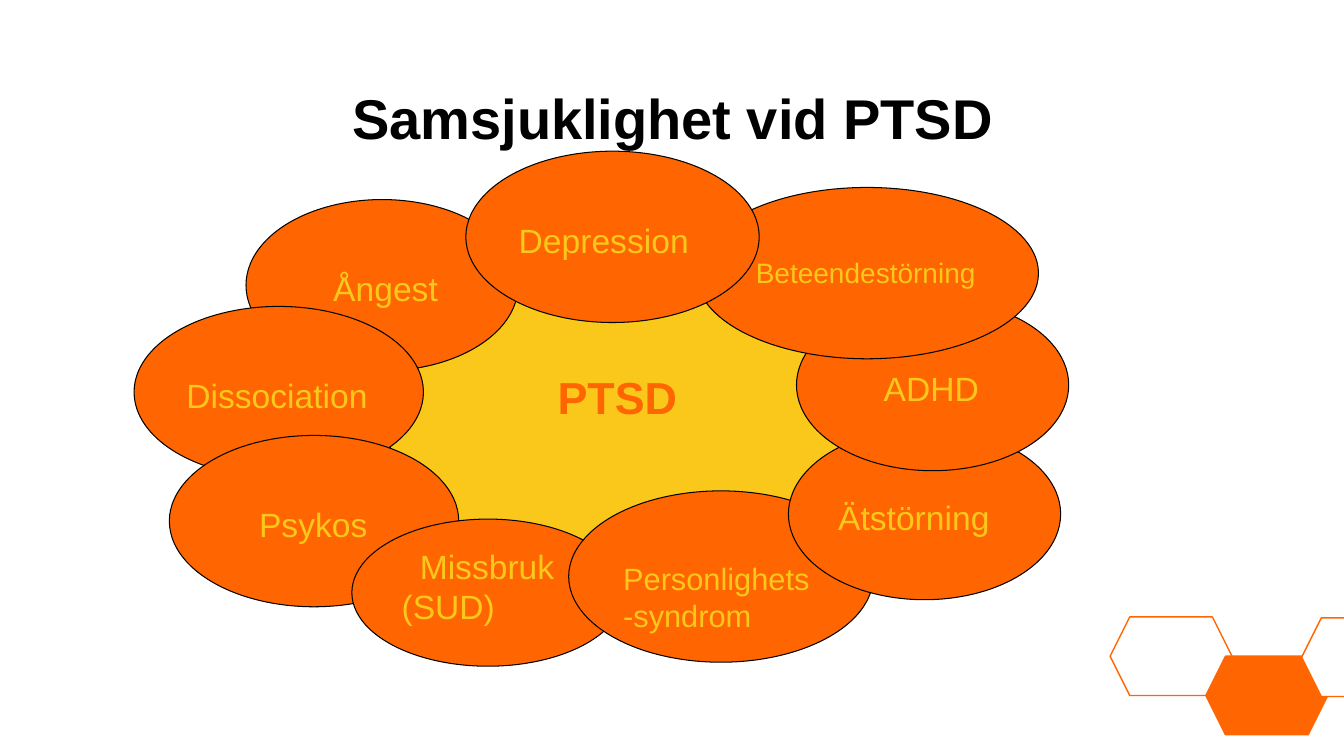
from dataclasses import dataclass

from pptx import Presentation
from pptx.dml.color import RGBColor
from pptx.enum.shapes import MSO_SHAPE
from pptx.enum.text import MSO_ANCHOR, PP_ALIGN
from pptx.util import Inches, Pt

COLORS = {
    "orange": "FF6500",
    "yellow": "FAC81A",
    "black": "000000",
    "white": "FFFFFF",
}
FONT = "Arial"
FIRST_LINE, SECOND_LINE = 0.05, 0.43  # top insets of the labels


@dataclass
class Hexagon:
    left: float
    top: float
    fill: str


@dataclass
class Bubble:
    label: str
    left: float
    top: float
    width: float
    height: float = 1.7
    inset: float = 0.1
    top_inset: float = SECOND_LINE
    indent: float = 0
    size: int = 24
    bold: bool = False
    fill: str = "orange"
    color: str = "yellow"


HEXAGONS = [
    Hexagon(11.01, 6.12, "white"),
    Hexagon(11.96, 6.51, "orange"),
    Hexagon(12.91, 6.13, "white"),
]

# Listed from back to front
BUBBLES = [
    Bubble("PTSD", 3.83, 2.84, 4.58, 2.69, inset=1.03, size=32, bold=True,
           fill="yellow", color="orange"),
    Bubble("Ångest", 2.44, 1.98, 2.7, inset=0.47),
    Bubble("Dissociation", 1.33, 3.04, 2.87),
    Bubble("Psykos", 1.68, 4.32, 2.87, inset=0.47),
    Bubble("Missbruk (SUD)", 3.49, 5.15, 2.7, 1.46, top_inset=FIRST_LINE,
           indent=0.18),
    Bubble("Personlighets-syndrom", 5.64, 4.87, 3.02, size=22),
    Bubble("Ätstörning", 7.82, 4.25, 2.7),
    Bubble("ADHD", 7.9, 2.97, 2.7, inset=0.47),
    Bubble("Beteendestörning", 6.9, 1.86, 3.4, size=20),
    Bubble("Depression", 4.62, 1.5, 2.91),
]


def rgb(name: str) -> RGBColor:
    return RGBColor.from_string(COLORS[name])


def add_outlined(slide, kind, left: float, top: float, width: float,
                 height: float, fill: str, line: str, weight: float):
    shape = slide.shapes.add_shape(
        kind, Inches(left), Inches(top), Inches(width), Inches(height))
    shape.shadow.inherit = False
    shape.fill.solid()
    shape.fill.fore_color.rgb = rgb(fill)
    shape.line.color.rgb = rgb(line)
    shape.line.width = Pt(weight)
    return shape


def format_text(paragraph, size: int, color: str, bold: bool) -> None:
    for run in paragraph.runs:
        run.font.name = FONT
        run.font.size = Pt(size)
        run.font.bold = bold
        run.font.color.rgb = rgb(color)


def add_bubble(slide, bubble: Bubble) -> None:
    shape = add_outlined(slide, MSO_SHAPE.OVAL, bubble.left, bubble.top,
                         bubble.width, bubble.height, bubble.fill, "black", 0.75)
    text_frame = shape.text_frame
    text_frame.word_wrap = True
    text_frame.vertical_anchor = MSO_ANCHOR.TOP
    text_frame.margin_left = Inches(bubble.inset)
    text_frame.margin_top = Inches(bubble.top_inset)
    text_frame.margin_right = Inches(0.1)
    text_frame.margin_bottom = 0
    text_frame.text = bubble.label
    paragraph = text_frame.paragraphs[0]
    paragraph.alignment = PP_ALIGN.LEFT
    if bubble.indent:
        properties = paragraph._p.get_or_add_pPr()
        properties.set("marL", "0")
        properties.set("indent", str(Inches(bubble.indent)))
    format_text(paragraph, bubble.size, bubble.color, bubble.bold)


def add_title(slide, text: str) -> None:
    title = slide.shapes.title
    title.left, title.top = Inches(0.67), Inches(0.74)
    title.width, title.height = Inches(12), Inches(0.85)
    title.text_frame.text = text
    title.text_frame.vertical_anchor = MSO_ANCHOR.MIDDLE
    paragraph = title.text_frame.paragraphs[0]
    paragraph.alignment = PP_ALIGN.CENTER
    format_text(paragraph, 40, "black", True)


def main() -> None:
    presentation = Presentation()
    presentation.slide_width = Inches(13.33)
    presentation.slide_height = Inches(7.5)
    slide = presentation.slides.add_slide(presentation.slide_layouts[5])

    add_title(slide, "Samsjuklighet vid PTSD")

    # Corner decoration
    for hexagon in HEXAGONS:
        add_outlined(slide, MSO_SHAPE.HEXAGON, hexagon.left, hexagon.top,
                     1.21, 0.78, hexagon.fill, "orange", 1)

    # PTSD surrounded by its comorbid conditions
    for bubble in BUBBLES:
        add_bubble(slide, bubble)

    presentation.save("out.pptx")


if __name__ == "__main__":
    main()
